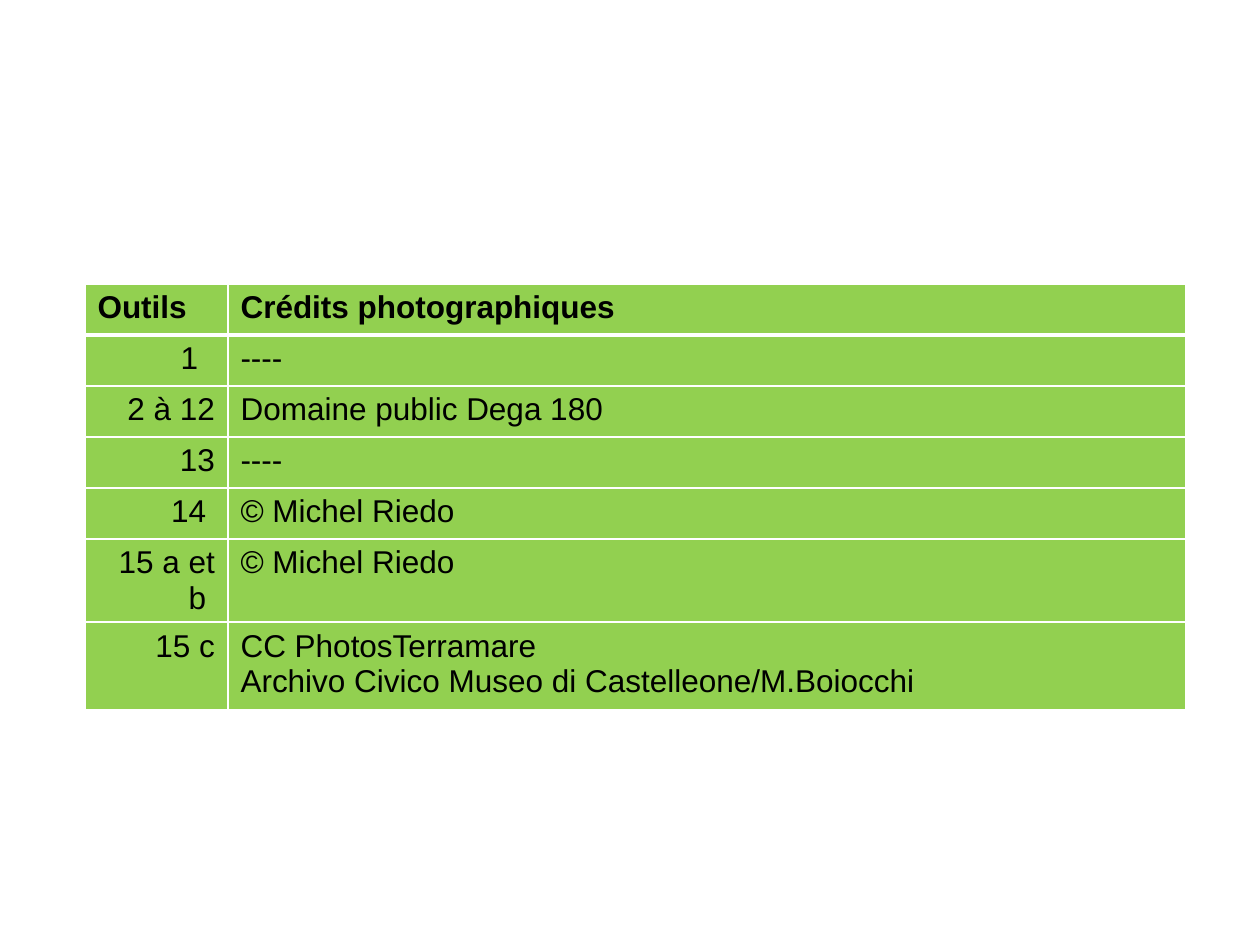
"""Build a slide with a table of photo credits."""
from lxml import etree
from pptx import Presentation
from pptx import util as u
from pptx.dml.color import RGBColor
from pptx.enum import text
from pptx.oxml import ns

HUES = {"fill": "92D050", "line": "FFFFFF", "ink": "000000"}
ROWS = [
    ("Outils", "Crédits photographiques"),
    ("1", "----"),
    ("2 à 12", "Domaine public Dega 180"),
    ("13", "----"),
    ("14 ", "© Michel Riedo"),
    ("15 a et b ", "© Michel Riedo"),
    ("15 c", "CC PhotosTerramare\nArchivo Civico Museo di Castelleone/M.Boiocchi"),
]
WIDTHS = [143, 958]
HEIGHTS = [51] * 6 + [88]
LEFT, TOP = 85, 284
PADS = {(1, 0): 30}


def px(n):
    return u.Emu(round(n * 914400 / 126))


def hue(name):
    return RGBColor.from_string(HUES[name])


def write(cell, words, size=18, bold=False, right=False, pad=13):
    cell.margin_right = px(pad)
    cell.text = words
    for para in cell.text_frame.paragraphs:
        para.alignment = text.PP_ALIGN.RIGHT if right else text.PP_ALIGN.LEFT
        for run in para.runs:
            font = run.font
            font.name, font.size, font.bold = "Arial", u.Pt(size), bold
            font.color.rgb = hue("ink")


def edge(cell, side, width):
    line = etree.SubElement(cell._tc.get_or_add_tcPr(), ns.qn("a:ln" + side), w=str(u.Pt(width)))
    fill = etree.SubElement(line, ns.qn("a:solidFill"))
    etree.SubElement(fill, ns.qn("a:srgbClr"), val=HUES["line"])


def main():
    prs = Presentation()
    prs.slide_width, prs.slide_height = u.Inches(10), u.Inches(7.5)
    slide = prs.slides.add_slide(prs.slide_layouts[6])
    grid = slide.shapes.add_table(
        len(ROWS), len(WIDTHS), px(LEFT), px(TOP), px(sum(WIDTHS)), px(sum(HEIGHTS))
    ).table
    for col, wide in zip(grid.columns, WIDTHS):
        col.width = px(wide)
    for row, high in zip(grid.rows, HEIGHTS):
        row.height = px(high)
    for r, row in enumerate(ROWS):
        for c, words in enumerate(row):
            cell = grid.cell(r, c)
            write(cell, words, bold=r == 0, right=r > 0 and c == 0, pad=PADS.get((r, c), 13))
            for side in "LRTB":
                thick = (r, side) in [(0, "B"), (1, "T")]
                edge(cell, side, 3 if thick else 1)
            cell.fill.solid()
            cell.fill.fore_color.rgb = hue("fill")
    prs.save("out.pptx")


if __name__ == "__main__":
    main()
